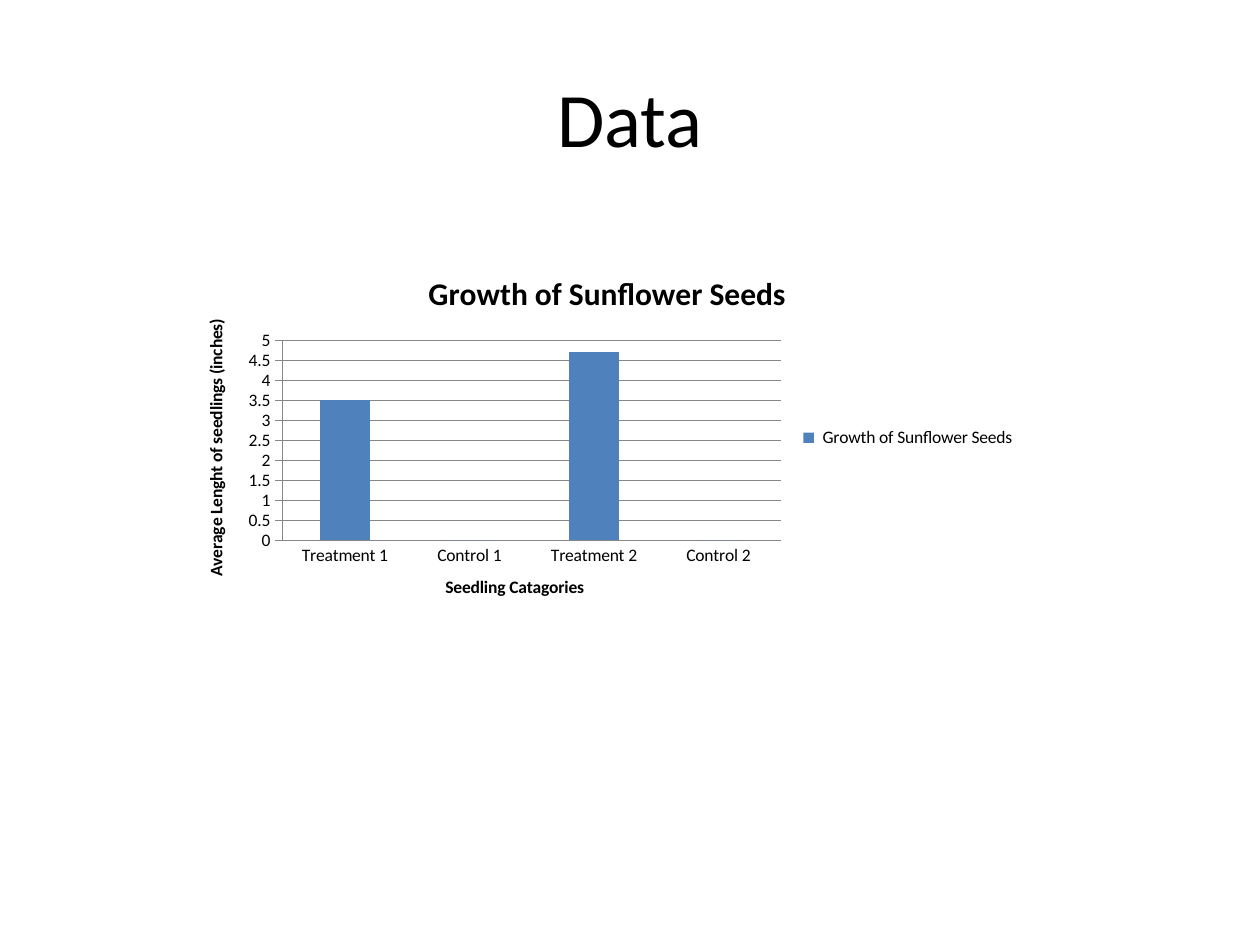
from pptx import Presentation
from pptx import util as u
from pptx.chart.data import CategoryChartData
from pptx.dml.color import RGBColor
from pptx.enum import chart as ch, text

BLACK = RGBColor(0x00, 0x00, 0x00)
BLUE = RGBColor(0x4F, 0x81, 0xBD)
GRAY = RGBColor(0x86, 0x86, 0x86)


def write(frame, wording, size=10, bold=False, color=BLACK, font="Calibri",
          align=text.PP_ALIGN.CENTER):
    """Put one formatted paragraph into a text frame."""
    paragraph = frame.paragraphs[0]
    paragraph.alignment = align
    run = paragraph.add_run()
    run.text = wording
    run.font.size = u.Pt(size)
    run.font.bold = bold
    run.font.name = font
    run.font.color.rgb = color


class Page:
    def __init__(self, slide, font="Calibri"):
        self.slide = slide
        self.font = font

    def heading(self, wording, left, top, width, height):
        box = self.slide.shapes.add_textbox(left, top, width, height)
        frame = box.text_frame
        frame.word_wrap = True
        frame.vertical_anchor = text.MSO_ANCHOR.MIDDLE
        write(frame, wording, size=44, font=self.font)

    def column_chart(self, name, averages, left, top, width, height):
        data = CategoryChartData()
        data.categories = list(averages)
        data.add_series(name, list(averages.values()))
        chart = self.slide.shapes.add_chart(
            ch.XL_CHART_TYPE.COLUMN_CLUSTERED, left, top, width, height, data).chart
        chart.font.name = self.font
        chart.font.size = u.Pt(10)
        chart.font.color.rgb = BLACK

        chart.has_title = True
        write(chart.chart_title.text_frame, name, size=18, bold=True, font=self.font)
        chart.chart_title.include_in_layout = False
        chart.has_legend = True
        chart.legend.position = ch.XL_LEGEND_POSITION.RIGHT
        chart.legend.include_in_layout = False

        plot = chart.plots[0]
        plot.gap_width = 150
        plot.vary_by_categories = False
        columns = plot.series[0].format.fill
        columns.solid()
        columns.fore_color.rgb = BLUE
        return chart

    def axis(self, axis, title, tick):
        axis.has_title = True
        write(axis.axis_title.text_frame, title, bold=True, font=self.font)
        axis.major_tick_mark = tick
        self.rule(axis.format.line)

    def rule(self, line):
        line.color.rgb = GRAY
        line.width = u.Pt(0.75)


def main():
    deck = Presentation()
    deck.slide_width, deck.slide_height = u.Cm(25.4), u.Cm(19.05)
    page = Page(deck.slides.add_slide(deck.slide_layouts[6]))

    page.heading("Data", u.Cm(1.27), u.Cm(0.76), u.Cm(22.86), u.Cm(3.18))

    averages = {"Treatment 1": 3.5, "Control 1": 0, "Treatment 2": 4.7, "Control 2": 0}
    growth = page.column_chart(" Growth of Sunflower Seeds", averages,
                               u.Cm(3.61), u.Cm(5.08), u.Cm(17.12), u.Cm(7.49))
    page.axis(growth.category_axis, "Seedling Catagories", ch.XL_TICK_MARK.NONE)

    length = growth.value_axis
    page.axis(length, "Average Lenght of seedlings (inches)", ch.XL_TICK_MARK.OUTSIDE)
    length.minimum_scale, length.maximum_scale, length.major_unit = 0, 5, 0.5
    length.has_major_gridlines = True
    page.rule(length.major_gridlines.format.line)

    deck.save("out.pptx")


if __name__ == "__main__":
    main()
